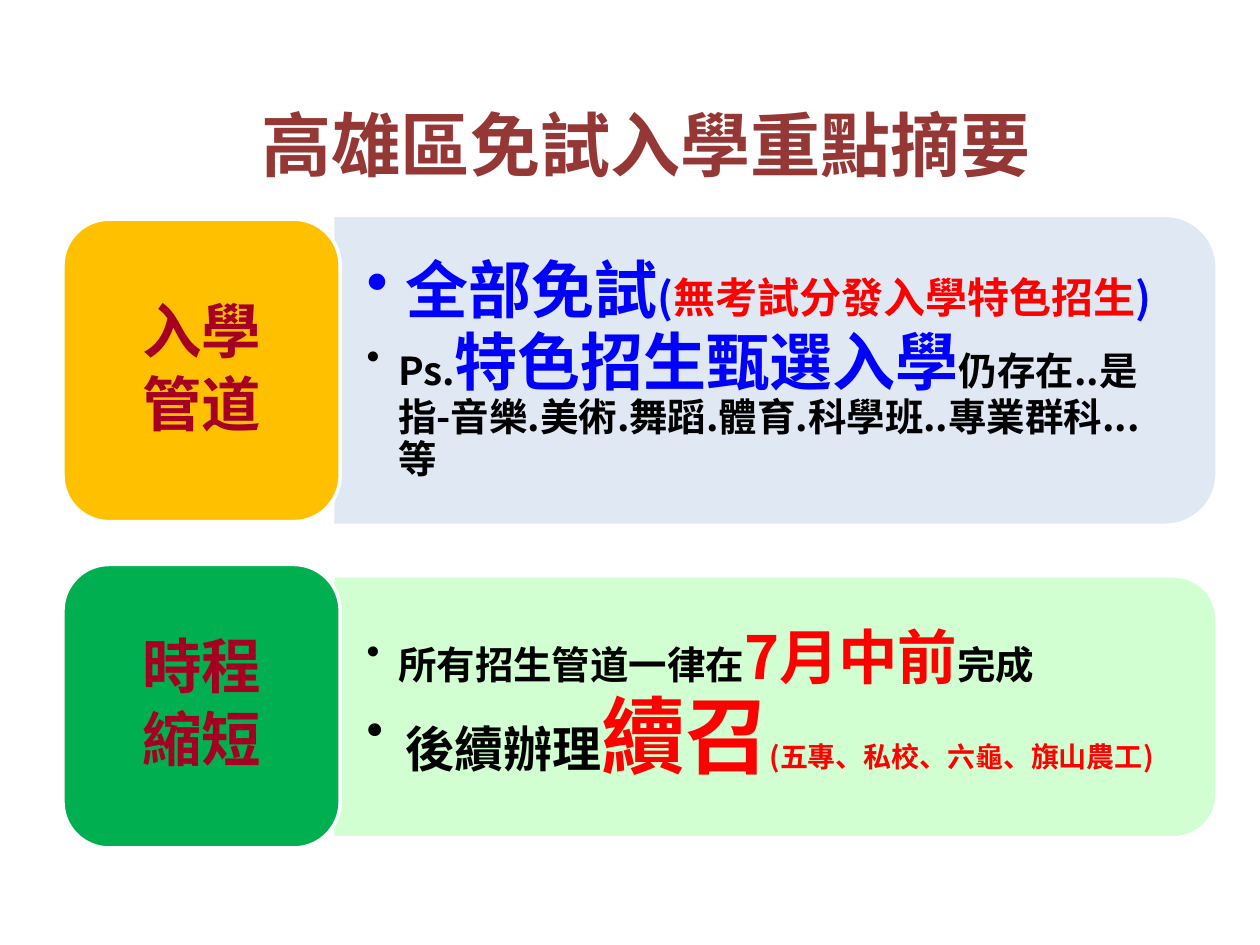
import pptx
import pptx.util
import pptx.oxml.ns
from lxml import etree
from pptx.dml.color import RGBColor
from pptx.enum.shapes import MSO_SHAPE
from pptx.enum.text import MSO_ANCHOR, PP_ALIGN
from pptx.util import Inches, Pt

FONT = "Noto Sans CJK SC"
BLACK = RGBColor(0x00, 0x00, 0x00)
WHITE = RGBColor(0xFF, 0xFF, 0xFF)
RED = RGBColor(0xFF, 0x00, 0x00)
BLUE = RGBColor(0x00, 0x00, 0xFF)
CRIMSON = RGBColor(0xA5, 0x00, 0x21)
BROWN = RGBColor(0x95, 0x37, 0x35)
AMBER = RGBColor(0xFF, 0xC0, 0x00)
GREEN = RGBColor(0x00, 0xB0, 0x50)
PALE_BLUE = RGBColor(0xDC, 0xE6, 0xF2)
PALE_GREEN = RGBColor(0xCC, 0xFF, 0xCC)

# Columns shared by both rows
LABEL_X, LABEL_W = 0.5, 2.2
PANEL_X, PANEL_W = 2.64, 7.02

# Each bullet is (indent, runs); each run is (text, size, colour)
ROWS = [
    dict(label=["入學", "管道"], label_fill=AMBER, label_y=1.74, label_h=2.4,
         panel_fill=PALE_BLUE, panel_y=1.71, panel_h=2.46, text_w=6.9,
         bullets=[
             (0.31, [("全部免試", 36, BLUE), ("(", 24, BLUE),
                     ("無考試分發入學特色招生", 24, RED), (")", 24, BLUE)]),
             (0.25, [("Ps.", 22, BLACK), ("特色招生甄選入學", 36, BLUE),
                     ("仍存在..是指-音樂.美術.舞蹈.體育.科學班..專業群科...等", 22, BLACK)]),
         ]),
    dict(label=["時程", "縮短"], label_fill=GREEN, label_y=4.48, label_h=2.25,
         panel_fill=PALE_GREEN, panel_y=4.57, panel_h=2.08, text_w=6.92,
         bullets=[
             (0.25, [("所有招生管道一律在", 22, BLACK), ("7月中前", 34, RED),
                     ("完成", 22, BLACK)]),
             (0.31, [("後續辦理", 28, BLACK), ("續召", 48, RED),
                     ("(五專、私校、六龜、旗山農工)", 16, RED)]),
         ]),
]


def child(parent, tag, **attrs):
    return etree.SubElement(parent, pptx.oxml.ns.qn(tag), **attrs)


def add_run(p, text, size, color, font=FONT):
    r = p.add_run()
    r.text = text
    r.font.size = Pt(size)
    r.font.bold = True
    r.font.color.rgb = color
    r.font.name = font
    if font == FONT:
        child(r.font._element, "a:ea", typeface=font)


def set_frame(tf, side, top):
    tf.word_wrap = True
    tf.vertical_anchor = MSO_ANCHOR.MIDDLE
    tf.margin_left = tf.margin_right = Inches(side)
    tf.margin_top = tf.margin_bottom = Inches(top)


def next_paragraph(tf, i, after):
    p = tf.paragraphs[0] if i == 0 else tf.add_paragraph()
    p.line_spacing = 0.9
    p.space_before = Pt(0)
    p.space_after = Pt(after)
    return p


def add_block(s, kind, x, y, w, h, color):
    sp = s.shapes.add_shape(kind, Inches(x), Inches(y), Inches(w), Inches(h))
    sp.shadow.inherit = False
    sp.fill.solid()
    sp.fill.fore_color.rgb = color
    sp.line.color.rgb = WHITE
    sp.line.width = Pt(2)
    return sp


def add_title(s, x, y, w, h):
    sp = s.shapes.title
    sp.left, sp.top, sp.width, sp.height = map(Inches, (x, y, w, h))
    sp.text_frame.vertical_anchor = MSO_ANCHOR.MIDDLE
    p = sp.text_frame.paragraphs[0]
    p.alignment = PP_ALIGN.CENTER
    add_run(p, "高雄區免試入學重點摘要", 40, BROWN, "Calibri")


def add_panel(s, x, y, w, h, text_w, color, bullets):
    # Upright shape turned a quarter, so its rounded end faces right
    sp = add_block(s, MSO_SHAPE.ROUND_2_SAME_RECTANGLE,
                   x + (w - h) / 2, y + (h - w) / 2, h, w, color)
    sp.rotation = 90
    fill = sp._element.spPr.find(pptx.oxml.ns.qn("a:solidFill"))
    child(fill[0], "a:alpha", val="90000")

    # Text sits inside the rounded corners
    inset = 0.05 * h
    tb = s.shapes.add_textbox(Inches(x), Inches(y + inset),
                              Inches(text_w), Inches(h - 2 * inset))
    set_frame(tb.text_frame, 0.27, 0.14)
    for i, (indent, runs) in enumerate(bullets):
        p = next_paragraph(tb.text_frame, i, 2)
        pPr = p._p.get_or_add_pPr()
        pPr.set("marL", str(Inches(indent)))
        pPr.set("indent", str(-Inches(indent)))
        child(pPr, "a:buChar", char="•")
        for run in runs:
            add_run(p, *run)


def add_label(s, x, y, w, h, color, lines):
    sp = add_block(s, MSO_SHAPE.ROUNDED_RECTANGLE, x, y, w, h, color)
    set_frame(sp.text_frame, 0.14, 0.07)
    for i, text in enumerate(lines):
        p = next_paragraph(sp.text_frame, i, 5)
        p.alignment = PP_ALIGN.CENTER
        add_run(p, text, 34, CRIMSON)


def main():
    prs = pptx.Presentation()
    prs.slide_width, prs.slide_height = Inches(10), Inches(7.5)
    s = prs.slides.add_slide(prs.slide_layouts[5])
    add_title(s, 1, 0.64, 8.25, 0.99)
    for row in ROWS:
        add_panel(s, PANEL_X, row["panel_y"], PANEL_W, row["panel_h"],
                  row["text_w"], row["panel_fill"], row["bullets"])
        add_label(s, LABEL_X, row["label_y"], LABEL_W, row["label_h"],
                  row["label_fill"], row["label"])
    prs.save("out.pptx")


if __name__ == "__main__":
    main()
